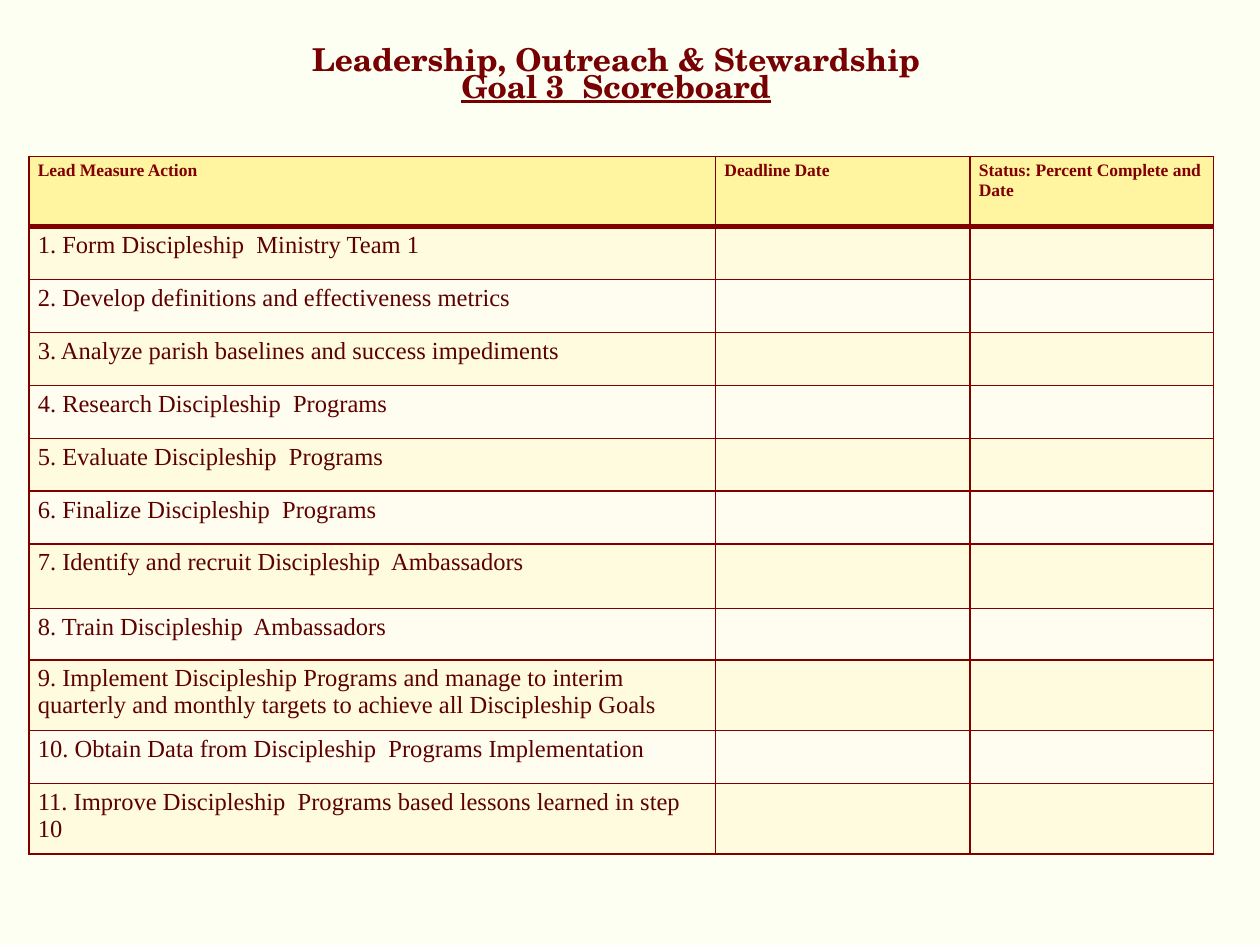
from lxml import etree
from pptx import Presentation
from pptx.dml.color import RGBColor
from pptx.enum.text import MSO_ANCHOR, PP_ALIGN
from pptx.oxml.ns import qn
from pptx.util import Inches, Pt

CENTER = PP_ALIGN.CENTER
MIDDLE = MSO_ANCHOR.MIDDLE

BACKGROUND = RGBColor(0xFE, 0xFF, 0xF3)
TITLE_RED = RGBColor(0x76, 0x00, 0x02)
HEADER_RED = RGBColor(0x80, 0x00, 0x00)
BODY_RED = RGBColor(0x5D, 0x01, 0x00)
HEADER_FILL = RGBColor(0xFF, 0xF4, 0xA0)
BAND_FILLS = (RGBColor(0xFF, 0xFB, 0xDF), RGBColor(0xFF, 0xFD, 0xF0))

TITLE_FONT = "TeX Gyre Schola"
TABLE_FONT = "Times New Roman"
SIDE_MARGIN = Inches(0.07)
END_MARGIN = Inches(0.04)

HEADERS = ("Lead Measure Action", "Deadline Date", "Status: Percent Complete and Date")
COLUMN_WIDTHS = (5.45, 2.02, 1.93)
HEADER_HEIGHT = 0.56
ACTIONS = (
    ("Form Discipleship  Ministry Team 1", 0.42),
    ("Develop definitions and effectiveness metrics", 0.42),
    ("Analyze parish baselines and success impediments", 0.42),
    ("Research Discipleship  Programs", 0.42),
    ("Evaluate Discipleship  Programs", 0.42),
    ("Finalize Discipleship  Programs", 0.42),
    ("Identify and recruit Discipleship  Ambassadors", 0.51),
    ("Train Discipleship  Ambassadors", 0.41),
    ("Implement Discipleship Programs and manage to interim quarterly "
     "and monthly targets to achieve all Discipleship Goals", 0.56),
    ("Obtain Data from Discipleship  Programs Implementation", 0.42),
    ("Improve Discipleship  Programs based lessons learned in step 10", 0.56),
)


def set_margins(target):
    """Apply the shared text margins to a cell or text frame."""
    target.margin_left = target.margin_right = SIDE_MARGIN
    target.margin_top = target.margin_bottom = END_MARGIN


def style_font(font, name, size, color, bold):
    """Set the typeface, size, colour and weight of a font."""
    font.name = name
    font.size = Pt(size)
    font.color.rgb = color
    font.bold = bold


def set_borders(cell, top, bottom):
    """Draw the four cell borders, with top and bottom widths in points."""
    properties = cell._tc.get_or_add_tcPr()
    for side, width in (("L", 1), ("R", 1), ("T", top), ("B", bottom)):
        line = etree.SubElement(properties, qn(f"a:ln{side}"), w=str(Pt(width)))
        fill = etree.SubElement(line, qn("a:solidFill"))
        etree.SubElement(fill, qn("a:srgbClr"), val=str(HEADER_RED))


def add_title(slide, left, top, width, height):
    """Place the two-line centred title."""
    text_frame = slide.shapes.add_textbox(left, top, width, height).text_frame
    text_frame.word_wrap = True
    text_frame.vertical_anchor = MIDDLE
    set_margins(text_frame)
    text_frame.text = "Leadership, Outreach & Stewardship\nGoal 3  Scoreboard"
    for paragraph in text_frame.paragraphs:
        paragraph.alignment = CENTER
        paragraph.line_spacing = 0.7
        style_font(paragraph.runs[0].font, TITLE_FONT, 18, TITLE_RED, True)
    heading, subheading = text_frame.paragraphs
    heading._p.get_or_add_pPr().set("marR", str(Inches(0.16)))
    subheading.runs[0].font.underline = True


def add_scoreboard(slide, left, top, width, height):
    """Place the table of lead measures, deadlines and status."""
    rows = [HEADERS]
    rows += [(f"{number}. {action}", "", "") for number, (action, _) in enumerate(ACTIONS, 1)]
    heights = [HEADER_HEIGHT] + [row_height for _, row_height in ACTIONS]
    table = slide.shapes.add_table(len(rows), len(HEADERS), left, top, width, height).table
    for column, column_width in zip(table.columns, COLUMN_WIDTHS):
        column.width = Inches(column_width)
    for row_index, (texts, row_height) in enumerate(zip(rows, heights)):
        is_header = row_index == 0
        table.rows[row_index].height = Inches(row_height)
        for column_index, text in enumerate(texts):
            cell = table.cell(row_index, column_index)
            set_margins(cell)
            set_borders(cell, 3 if row_index == 1 else 1, 3 if is_header else 1)
            cell.fill.solid()
            cell.fill.fore_color.rgb = HEADER_FILL if is_header else BAND_FILLS[(row_index - 1) % 2]
            cell.text_frame.text = text
            for run in cell.text_frame.paragraphs[0].runs:
                style_font(run.font, TABLE_FONT, 10 if is_header else 14,
                           HEADER_RED if is_header else BODY_RED, is_header)


def main():
    """Build and save the scoreboard slide."""
    presentation = Presentation()
    presentation.slide_width = Inches(10)
    presentation.slide_height = Inches(7.5)
    slide = presentation.slides.add_slide(presentation.slide_layouts[6])
    slide.background.fill.solid()
    slide.background.fill.fore_color.rgb = BACKGROUND
    add_scoreboard(slide, Inches(0.23), Inches(1.24), Inches(9.4), Inches(5.55))
    add_title(slide, Inches(0.81), Inches(0.14), Inches(8.32), Inches(0.94))
    presentation.save("out.pptx")


if __name__ == "__main__":
    main()
